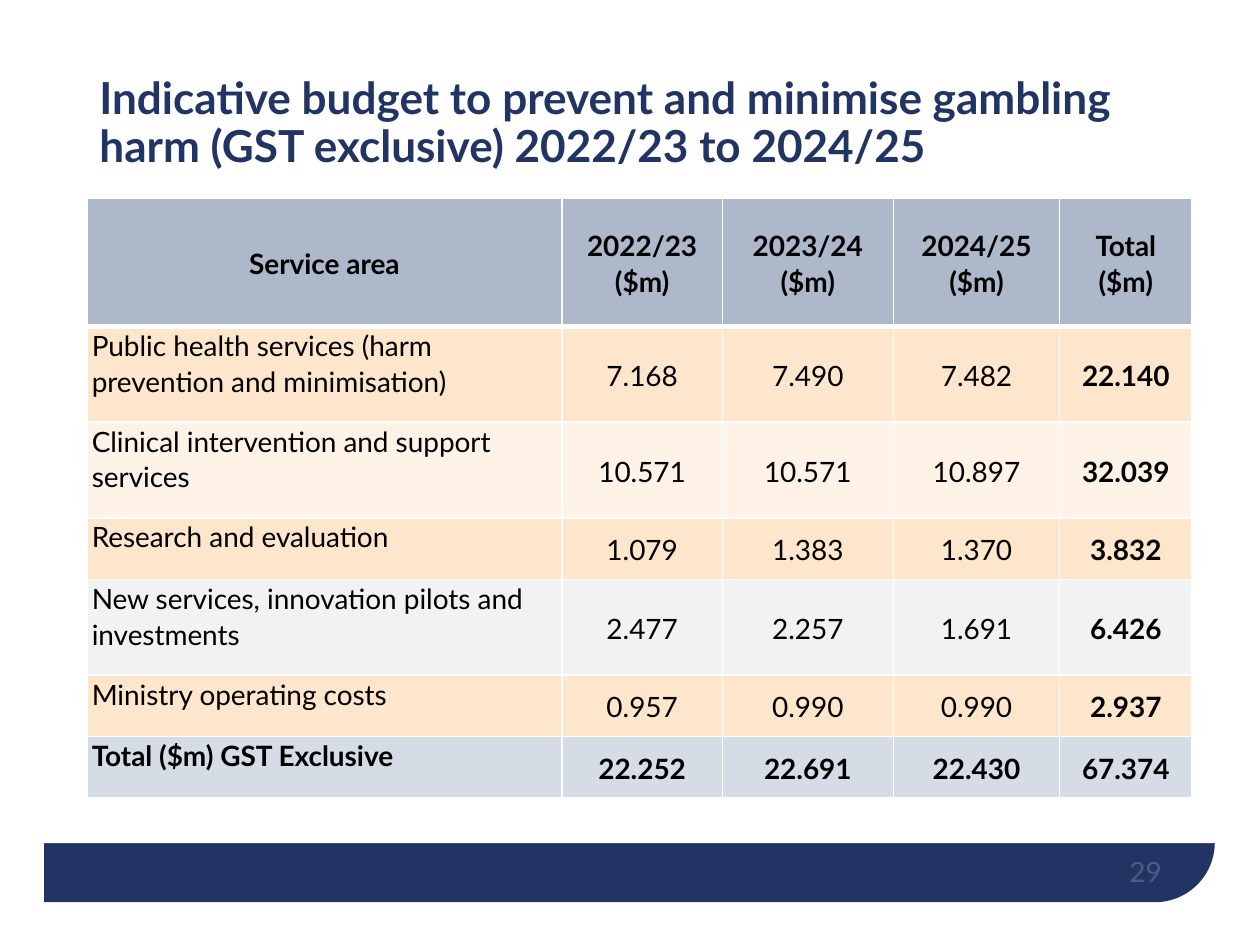
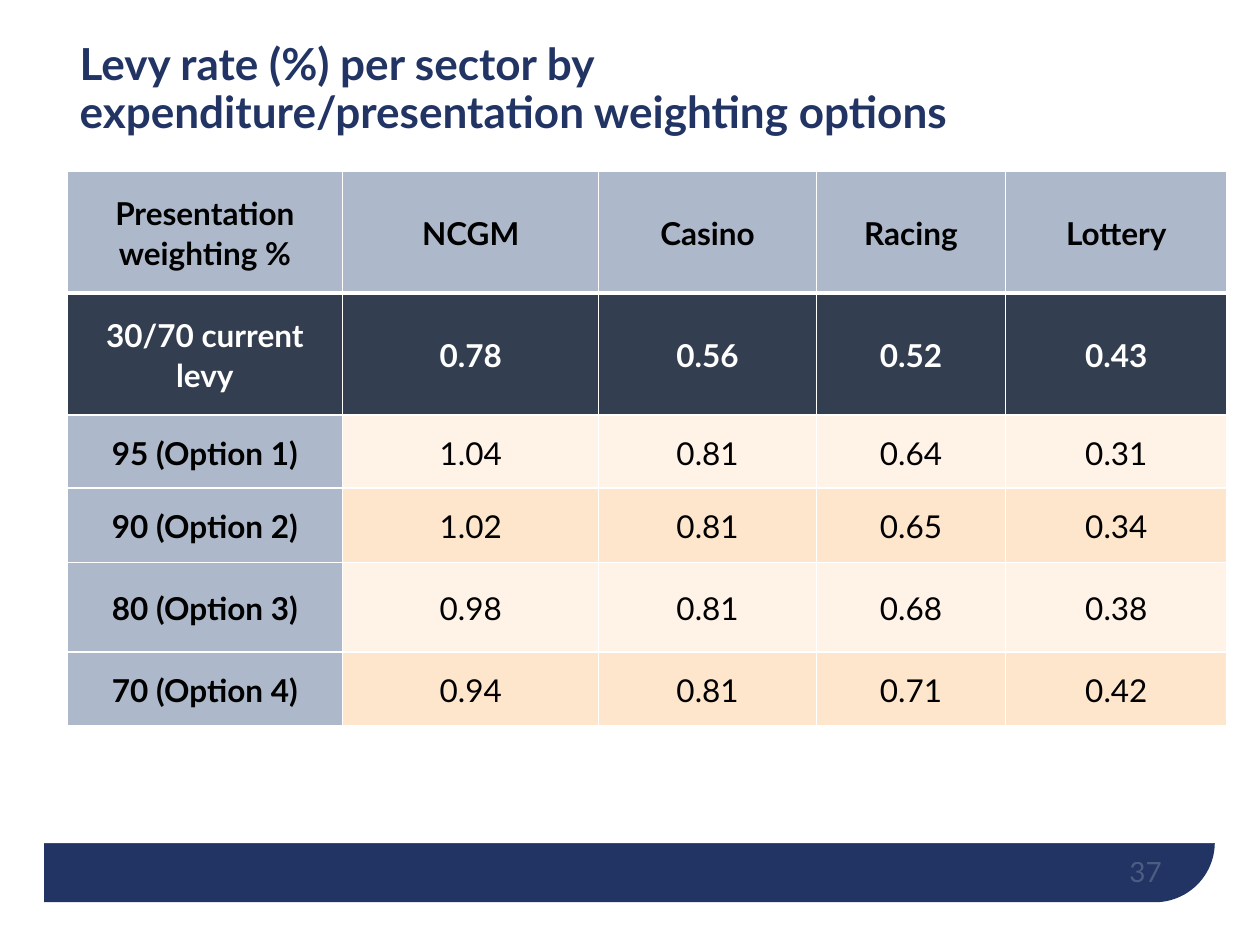
"""Build two slides of gambling-harm budget and levy rate tables."""
from lxml import etree
from pptx import Presentation
from pptx import util as u
from pptx.dml.color import RGBColor
from pptx.enum import shapes, text
from pptx.oxml import ns

FONT = "Lato"
NAVY, SLATE, STEEL, MIST = "213463", "333F50", "ADB9CA", "D6DCE5"
PEACH, CREAM, GREY = "FEE6CC", "FFF3E7", "F2F2F2"
WHITE, BLACK = "FFFFFF", "000000"

BUDGET = [
    ("Service area", "2022/23\v($m)", "2023/24\v($m)", "2024/25\v($m)", "Total\v($m)"),
    ("Public health services (harm prevention and minimisation)",
     "7.168", "7.490", "7.482", "22.140"),
    ("Clinical intervention and support services", "10.571", "10.571", "10.897", "32.039"),
    ("Research and evaluation", "1.079", "1.383", "1.370", "3.832"),
    ("New services, innovation pilots and investments", "2.477", "2.257", "1.691", "6.426"),
    ("Ministry operating costs", "0.957", "0.990", "0.990", "2.937"),
    ("Total ($m) GST Exclusive", "22.252", "22.691", "22.430", "67.374"),
]
BUDGET_FILLS = [STEEL, PEACH, CREAM, PEACH, GREY, PEACH, MIST]

LEVY = [
    ("Presentation weighting %", "NCGM", "Casino", "Racing", "Lottery"),
    ("30/70 current levy", "0.78", "0.56", "0.52", "0.43"),
    ("95 (Option 1)", "1.04", "0.81", "0.64", "0.31"),
    ("90 (Option 2)", "1.02", "0.81", "0.65", "0.34"),
    ("80 (Option 3)", "0.98", "0.81", "0.68", "0.38"),
    ("70 (Option 4)", "0.94", "0.81", "0.71", "0.42"),
]
LEVY_FILLS = [STEEL, SLATE, CREAM, PEACH, CREAM, PEACH]


def rgb(value):
    """Turn a hex string into a colour."""
    return RGBColor.from_string(value)


def cm(*lengths):
    """Turn numbers into lengths in centimetres."""
    return [u.Cm(n) for n in lengths]


def write(p, words, size, color, bold=False, align=text.PP_ALIGN.LEFT, spacing=1.0):
    """Set the text of a paragraph and format its runs."""
    p.text = words
    p.alignment, p.line_spacing = align, spacing
    for r in p.runs:
        r.font.name, r.font.size, r.font.bold = FONT, u.Pt(size), bold
        r.font.color.rgb = rgb(color)


def add_block(s, kind, box, fill):
    """Add a plain filled shape without outline."""
    sp = s.shapes.add_shape(kind, *cm(*box))
    sp.shadow.inherit = False
    sp.fill.solid()
    sp.fill.fore_color.rgb = rgb(fill)
    sp.line.fill.background()
    return sp


def add_footer(s, number):
    """Add the rounded navy band and the faint page number."""
    band = add_block(s, shapes.MSO_SHAPE.ROUND_1_RECTANGLE, (0.89, 0.94, 23.6, 17.25), NAVY)
    band.adjustments[0] = 0.07
    band.element.spPr.xfrm.set("flipV", "1")
    add_block(s, shapes.MSO_SHAPE.RECTANGLE, (0, 0, 25.4, 17), WHITE)
    tf = s.shapes.add_textbox(*cm(17.7, 16.89, 5.72, 1.02)).text_frame
    tf.margin_left = tf.margin_right = tf.margin_top = tf.margin_bottom = 0
    tf.word_wrap = True
    tf.vertical_anchor = text.MSO_ANCHOR.BOTTOM
    p = tf.paragraphs[0]
    write(p, number, 16, WHITE, align=text.PP_ALIGN.RIGHT)
    color = p.runs[0].font.fill._xPr.find(".//" + ns.qn("a:srgbClr"))
    etree.SubElement(color, ns.qn("a:alpha")).set("val", "20000")


def set_title(s, words, box):
    """Place and format the title in front of the band."""
    sp = s.shapes.title
    sp.left, sp.top, sp.width, sp.height = cm(*box)
    tf = sp.text_frame
    tf.auto_size, tf.word_wrap = text.MSO_AUTO_SIZE.NONE, True
    tf.vertical_anchor = text.MSO_ANCHOR.MIDDLE
    write(tf.paragraphs[0], words, 25.2, NAVY, True, spacing=0.9)
    s.shapes._spTree.append(sp.element)


def set_borders(cell, top, bottom):
    """Draw white borders; the widths at top and bottom are in points."""
    tc_pr = cell._tc.get_or_add_tcPr()
    for i, (side, width) in enumerate(zip("LRTB", (1, 1, top, bottom))):
        ln = etree.Element(ns.qn("a:ln" + side), w=str(u.Pt(width)))
        fill = etree.SubElement(ln, ns.qn("a:solidFill"))
        etree.SubElement(fill, ns.qn("a:srgbClr"), val=WHITE)
        tc_pr.insert(i, ln)


def add_table(s, corner, widths, heights, rows, size, margin, style):
    """Add a table; style gives fill, colour, bold, alignment and anchor of a cell."""
    box = cm(*corner, sum(widths), sum(heights))
    table = s.shapes.add_table(len(rows), len(widths), *box).table
    for column, width in zip(table.columns, widths):
        column.width = u.Cm(width)
    for i, (row, height) in enumerate(zip(rows, heights)):
        table.rows[i].height = u.Cm(height)
        for j, words in enumerate(row):
            fill, color, bold, align, anchor = style(i, j)
            cell = table.cell(i, j)
            cell.margin_left = cell.margin_right = u.Cm(margin)
            cell.margin_top = cell.margin_bottom = 0
            cell.vertical_anchor = anchor
            cell.fill.solid()
            cell.fill.fore_color.rgb = rgb(fill)
            set_borders(cell, 3 if i == 1 else 1, 3 if i == 0 else 1)
            write(cell.text_frame.paragraphs[0], words, size, color, bold, align, 1.07)


def budget_style(i, j):
    """Style a budget cell: labels at top left, totals bold."""
    bold = i in (0, len(BUDGET) - 1) or j == len(BUDGET[0]) - 1
    label = i > 0 and j == 0
    align = text.PP_ALIGN.LEFT if label else text.PP_ALIGN.CENTER
    anchor = text.MSO_ANCHOR.TOP if label else text.MSO_ANCHOR.MIDDLE
    return BUDGET_FILLS[i], BLACK, bold, align, anchor


def levy_style(i, j):
    """Style a levy cell: headings bold, the current levy on dark."""
    fill = STEEL if i > 1 and j == 0 else LEVY_FILLS[i]
    color = WHITE if i == 1 else BLACK
    return fill, color, i < 2 or j == 0, text.PP_ALIGN.CENTER, text.MSO_ANCHOR.MIDDLE


def add_slide(prs, title, title_box, number, **table):
    """Add a slide with footer, table and title."""
    s = prs.slides.add_slide(prs.slide_layouts[5])
    add_footer(s, number)
    add_table(s, **table)
    set_title(s, title, title_box)


def main():
    """Build and save the slides."""
    prs = Presentation()
    prs.slide_width, prs.slide_height = cm(25.4, 19.05)
    add_slide(
        prs, "Indicative budget to prevent and minimise gambling harm "
        "(GST exclusive) 2022/23 to 2024/25", (1.75, 1.02, 21.9, 2.97), "29",
        corner=(1.75, 3.99), widths=(9.58, 3.23, 3.45, 3.35, 2.67),
        heights=(2.59, 1.93, 1.93, 1.24, 1.93, 1.24, 1.24),
        rows=BUDGET, size=16, margin=0.1, style=budget_style)
    add_slide(
        prs, "Levy rate (%) per sector by expenditure/presentation weighting options",
        (1.35, 0.84, 20.96, 1.96), "37",
        corner=(1.35, 3.45), widths=(5.56, 5.16, 4.39, 3.81, 4.47),
        heights=(2.46, 2.46, 1.47, 1.5, 1.8, 1.5),
        rows=LEVY, size=18, margin=0.2, style=levy_style)
    prs.save("out.pptx")


if __name__ == "__main__":
    main()
